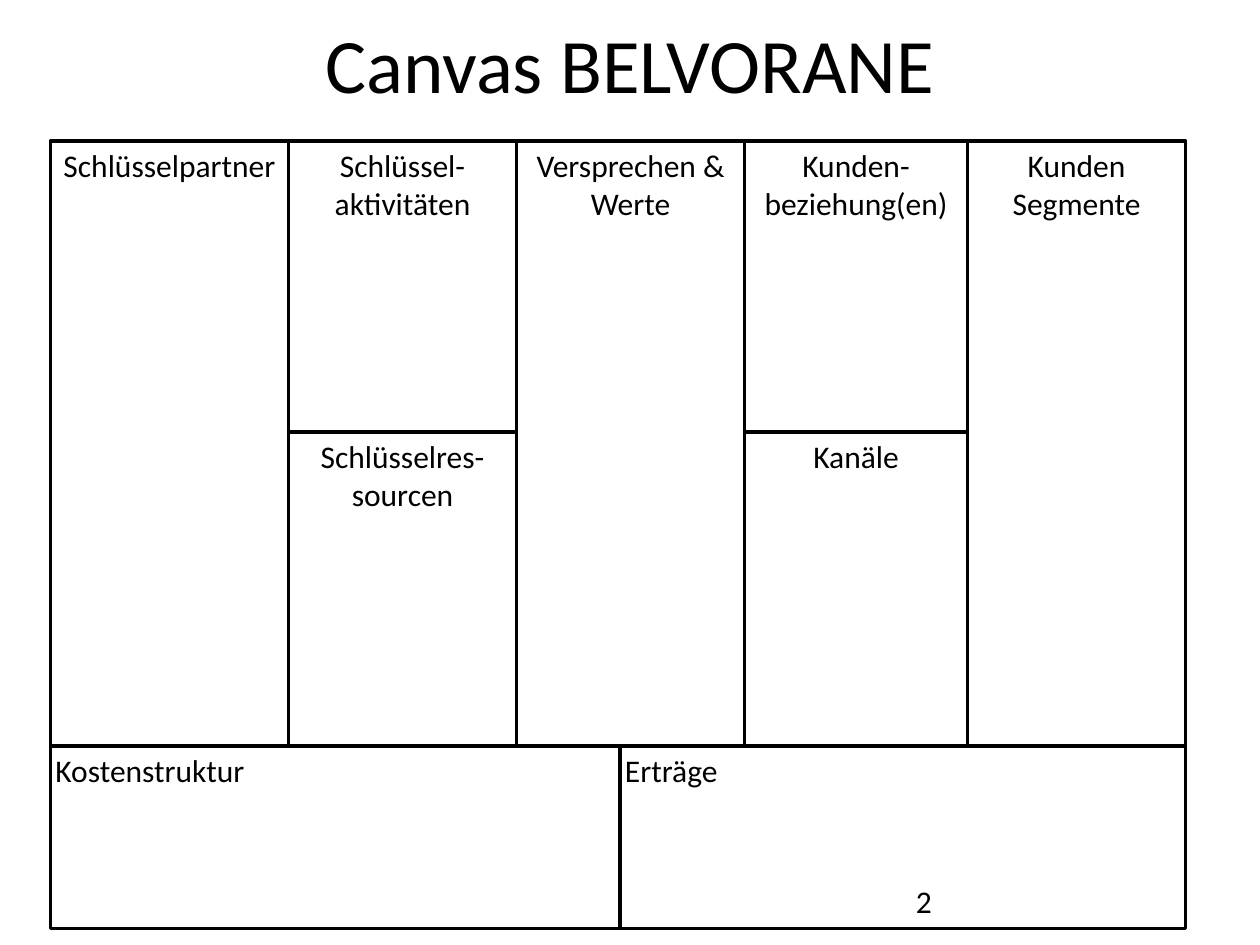
import pptx
import pptx.util
import pptx.dml.color
import pptx.enum.shapes
import pptx.enum.text

Inches = pptx.util.Inches
Pt = pptx.util.Pt
ALIGN = pptx.enum.text.PP_ALIGN
ANCHOR = pptx.enum.text.MSO_ANCHOR
BLACK = pptx.dml.color.RGBColor(0x00, 0x00, 0x00)


def write(frame, text, size, align, anchor):
    frame.word_wrap = True
    frame.vertical_anchor = anchor
    paragraph = frame.paragraphs[0]
    paragraph.text = text
    paragraph.alignment = align
    paragraph.font.name = "Calibri"
    paragraph.font.size = Pt(size)
    paragraph.font.color.rgb = BLACK


deck = pptx.Presentation()
deck.slide_width = Inches(10)
deck.slide_height = Inches(7.5)
slide = deck.slides.add_slide(deck.slide_layouts[6])

title = slide.shapes.add_textbox(Inches(0.5), Inches(-0.13), Inches(9), Inches(1.25))
write(title.text_frame, "Canvas BELVORANE", 44, ALIGN.CENTER, ANCHOR.MIDDLE)

partners, activities, values, relations, segments, right = 0.4, 2.29, 4.1, 5.91, 7.68, 9.41
top, middle, lower, bottom = 1.12, 3.43, 5.92, 7.37
revenue = 4.92

fields = [
    ("Schlüsselpartner", partners, top, activities, lower, ALIGN.CENTER),
    ("Schlüssel-aktivitäten", activities, top, values, middle, ALIGN.CENTER),
    ("Kunden\vSegmente", segments, top, right, lower, ALIGN.CENTER),
    ("Versprechen & Werte", values, top, relations, lower, ALIGN.CENTER),
    ("Kunden-beziehung(en)", relations, top, segments, middle, ALIGN.CENTER),
    ("Schlüsselres-sourcen", activities, middle, values, lower, ALIGN.CENTER),
    ("Kanäle", relations, middle, segments, lower, ALIGN.CENTER),
    ("Kostenstruktur", partners, lower, revenue, bottom, ALIGN.LEFT),
    ("Erträge", revenue, lower, right, bottom, ALIGN.LEFT),
]

canvas = slide.shapes.add_group_shape()
for label, x1, y1, x2, y2, align in fields:
    field = canvas.shapes.add_shape(
        pptx.enum.shapes.MSO_SHAPE.RECTANGLE,
        Inches(x1), Inches(y1), Inches(x2 - x1), Inches(y2 - y1),
    )
    field.shadow.inherit = False
    field.fill.background()
    field.line.color.rgb = BLACK
    field.line.width = Pt(2)
    frame = field.text_frame
    frame.margin_left = frame.margin_right = Inches(0.04)
    frame.margin_top = frame.margin_bottom = Inches(0.04)
    write(frame, label, 18, align, ANCHOR.TOP)

page_number = slide.shapes.add_textbox(Inches(7.17), Inches(6.95), Inches(2.33), Inches(0.4))
write(page_number.text_frame, "2", 18, ALIGN.LEFT, ANCHOR.TOP)

deck.save("out.pptx")
